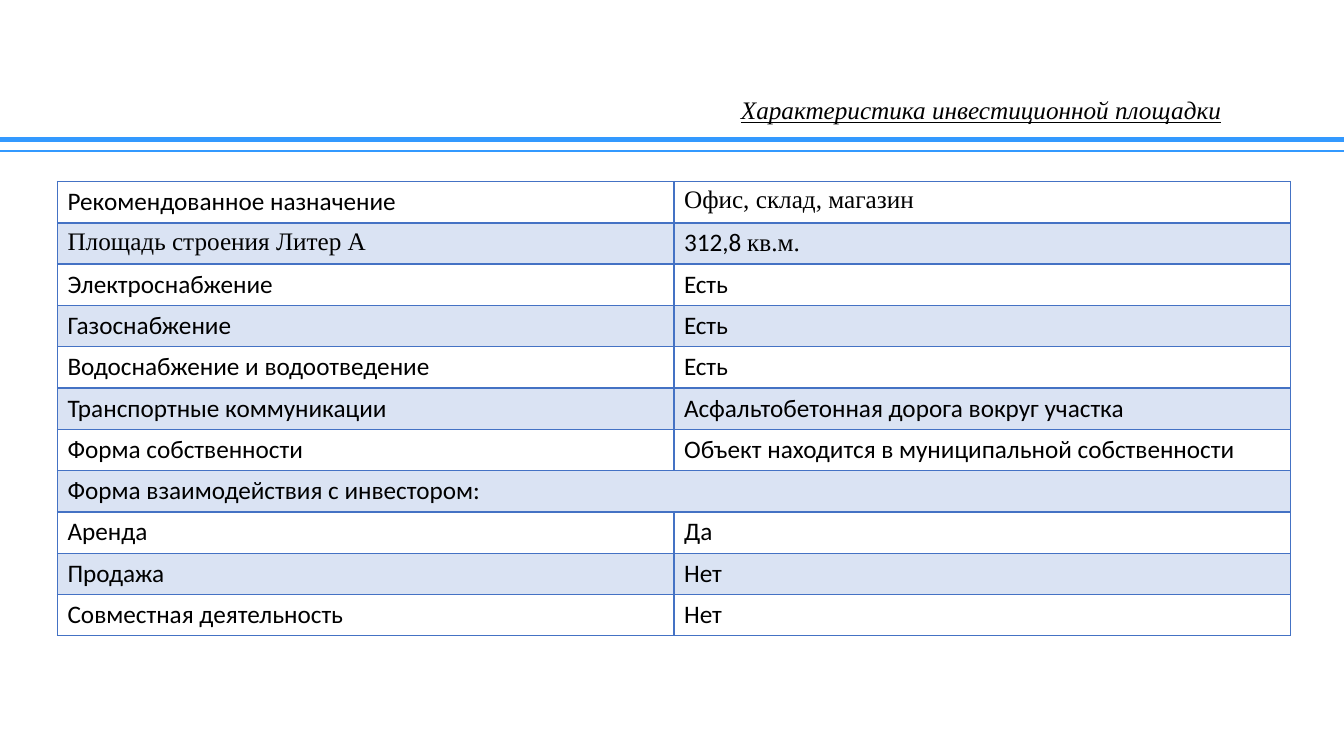
from lxml.etree import SubElement as Sub
from pptx import Presentation
from pptx.dml.color import RGBColor as Rgb
from pptx.enum.shapes import MSO_CONNECTOR as Conn
from pptx.enum.text import MSO_ANCHOR as Anchor, PP_ALIGN as Align
from pptx.oxml.ns import qn
from pptx.util import Inches, Pt

HUES = {"ink": "000000", "rule": "3399FF", "edge": "4472C4", "band": "DAE3F3"}
SANS, SERIF = "Calibri", "Times New Roman"
WIDE, HIGH = 13.33, 7.5
ROWS = [
    [[("Рекомендованное назначение", SANS)], [("Офис, склад, магазин", SERIF)]],
    [[("Площадь строения Литер А", SERIF)], [("312,8 ", SANS), ("кв.м.", SERIF)]],
    ["Электроснабжение", "Есть"],
    ["Газоснабжение", "Есть"],
    ["Водоснабжение и водоотведение", "Есть"],
    ["Транспортные коммуникации", "Асфальтобетонная дорога вокруг участка"],
    ["Форма собственности", "Объект находится в муниципальной собственности"],
    ["Форма взаимодействия с инвестором:"],
    ["Аренда", "Да"],
    ["Продажа", "Нет"],
    ["Совместная деятельность", "Нет"],
]


class Deck:
    """Draws styled elements on one slide, placed by shares of its size."""

    def __init__(self):
        self.show = Presentation()
        self.show.slide_width, self.show.slide_height = Inches(WIDE), Inches(HIGH)
        self.slide = self.show.slides.add_slide(self.show.slide_layouts[6])
        self.shapes = self.slide.shapes

    def place(self, x, y, w, h):
        wide, high = self.show.slide_width, self.show.slide_height
        return int(x * wide), int(y * high), int(w * wide), int(h * high)

    def style(self, font, name=None):
        font.size, font.color.rgb = Pt(18), Rgb.from_string(HUES["ink"])
        if name:
            font.name = name

    def rule(self, y, weight):
        left, top, width, _ = self.place(0, y, 1, 0)
        line = self.shapes.add_connector(Conn.STRAIGHT, left, top, width, top)
        line.line.width = Pt(weight)
        line.line.color.rgb = Rgb.from_string(HUES["rule"])
        Sub(line._element.spPr, qn("a:effectLst"))

    def title(self, text, *area):
        frame = self.shapes.add_textbox(*self.place(*area)).text_frame
        frame.word_wrap, frame.vertical_anchor = True, Anchor.MIDDLE
        para = frame.paragraphs[0]
        para.text, para.alignment, para.line_spacing = text, Align.CENTER, 0.9
        self.style(para.font, SERIF)
        para.font.italic = para.font.underline = True

    def edge(self, cell, side, weight):
        line = Sub(cell._tc.get_or_add_tcPr(), qn("a:ln" + side), w=str(Pt(weight)))
        Sub(Sub(line, qn("a:solidFill")), qn("a:srgbClr"), val=HUES["edge"])

    def cell(self, cell, parts, row):
        para = cell.text_frame.paragraphs[0]
        if isinstance(parts, str):
            parts = [(parts, SANS)]
        names = {name for _, name in parts}
        for text, name in parts:
            run = para.add_run()
            run.text = text
            if len(names) > 1:
                run.font.name = name
        self.style(para.font, parts[0][1] if len(names) == 1 else None)

    def table(self, rows, *area):
        grid = self.shapes.add_table(len(rows), 2, *self.place(*area)).table
        grid.first_row = grid.horz_banding = False
        for i, row in enumerate(rows):
            for j in range(2):
                cell = grid.cell(i, j)
                for side in "LRTB":
                    heavy = (i, side) in ((0, "B"), (1, "T"))
                    self.edge(cell, side, 2 if heavy else 1)
                if i % 2:
                    cell.fill.solid()
                    cell.fill.fore_color.rgb = Rgb.from_string(HUES["band"])
                else:
                    cell.fill.background()
            if len(row) == 1:
                grid.cell(i, 0).merge(grid.cell(i, 1))
            for j, parts in enumerate(row):
                self.cell(grid.cell(i, j), parts, i)


def main():
    deck = Deck()
    deck.rule(1.38 / HIGH, 3.5)
    deck.rule(1.5 / HIGH, 1.5)
    deck.title("Характеристика инвестиционной площадки", 0.5, 0.97 / HIGH, 0.46, 0.27 / HIGH)
    deck.table(ROWS, 0.57 / WIDE, 0.24, 12.23 / WIDE, 4.51 / HIGH)
    deck.show.save("out.pptx")


if __name__ == "__main__":
    main()
